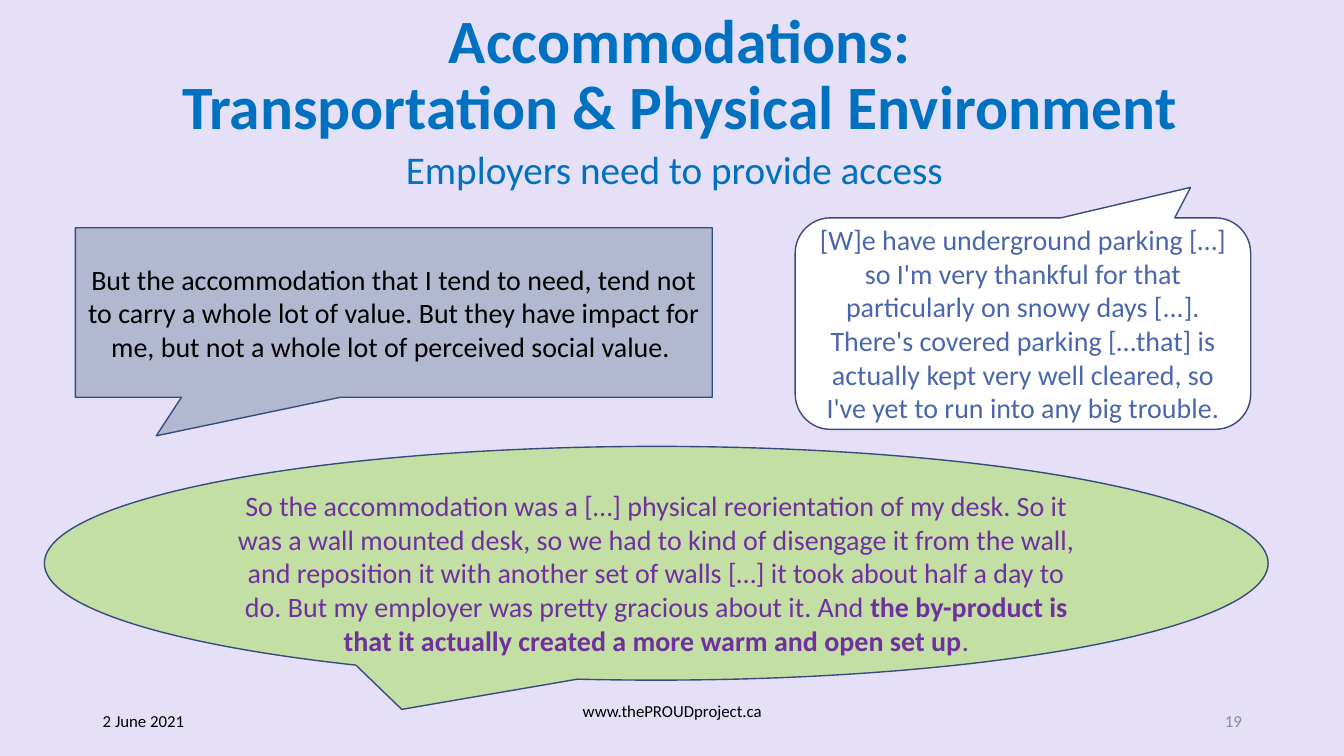
"""Build the slide on workplace accommodations with three quotation callouts."""
import pptx
import pptx.dml.color
import pptx.enum.shapes
import pptx.enum.text
import pptx.util
from lxml import etree

Cm = pptx.util.Cm
RGBColor = pptx.dml.color.RGBColor
MSO_SHAPE = pptx.enum.shapes.MSO_SHAPE
ANCHOR = pptx.enum.text.MSO_ANCHOR
ALIGN = pptx.enum.text.PP_ALIGN

LAVENDER = RGBColor(0xE5, 0xE0, 0xF8)
TITLE_BLUE = RGBColor(0x00, 0x70, 0xC0)
OUTLINE_BLUE = RGBColor(0x37, 0x4B, 0x7F)
QUOTE_BLUE = RGBColor(0x4A, 0x66, 0xAC)
SLATE = RGBColor(0x7F, 0x8F, 0xA9)
LIME = RGBColor(0x91, 0xDE, 0x26)
PURPLE = RGBColor(0x70, 0x30, 0xA0)
GREY = RGBColor(0x8C, 0x8C, 0x8C)
BLACK = RGBColor(0, 0, 0)
WHITE = RGBColor(0xFF, 0xFF, 0xFF)


def write(shape, text, size=20, color=BLACK, bold=False, align=ALIGN.CENTER,
          anchor=ANCHOR.MIDDLE, emphasis="", ending=""):
    """Fill the shape with one paragraph, optionally closing with bold words."""
    frame = shape.text_frame
    frame.word_wrap = True
    frame.auto_size = pptx.enum.text.MSO_AUTO_SIZE.NONE
    frame.vertical_anchor = anchor
    paragraph = frame.paragraphs[0]
    paragraph.text = text
    paragraph.alignment = align
    for part in filter(None, (emphasis, ending)):
        paragraph.add_run().text = part
    for run in paragraph.runs:
        run.font.name = "Calibri"
        run.font.size = pptx.util.Pt(size)
        run.font.color.rgb = color
        run.font.bold = bold or run.text == emphasis
    return paragraph


def add_callout(preset, left, top, width, height, fill, opacity, adjustments):
    """Draw an outlined speech callout with a partly transparent fill."""
    shape = slide.shapes.add_shape(preset, Cm(left), Cm(top), Cm(width), Cm(height))
    shape.shadow.inherit = False
    shape.fill.solid()
    shape.fill.fore_color.rgb = fill
    if opacity < 100:
        color = shape.fill._xPr.find(".//" + pptx.oxml.ns.qn("a:srgbClr"))
        etree.SubElement(color, pptx.oxml.ns.qn("a:alpha"), val=str(opacity * 1000))
    shape.line.color.rgb = OUTLINE_BLUE
    shape.line.width = pptx.util.Pt(1)
    for index, value in enumerate(adjustments):
        shape.adjustments[index] = value
    return shape


presentation = pptx.Presentation()
presentation.slide_width = Cm(33.87)
presentation.slide_height = Cm(19.05)
slide = presentation.slides.add_slide(presentation.slide_layouts[5])
slide.background.fill.solid()
slide.background.fill.fore_color.rgb = LAVENDER

title = slide.shapes.title
title.left, title.top, title.width, title.height = Cm(1.12), Cm(0.61), Cm(32.03), Cm(2.64)
heading = write(title, "Accommodations:\vTransportation & Physical Environment",
                size=44, color=TITLE_BLUE, bold=True)
heading.line_spacing = 0.9

subtitle = slide.shapes.add_textbox(Cm(8.61), Cm(3.53), Cm(16.99), Cm(1.45))
write(subtitle, "Employers need to provide access ", size=28, color=TITLE_BLUE,
      anchor=ANCHOR.TOP)

value_quote = add_callout(MSO_SHAPE.RECTANGULAR_CALLOUT, 1.9, 5.74, 16.05, 4.27,
                          SLATE, 49, (-0.373, 0.728))
write(value_quote,
      "But the accommodation that I tend to need, tend not to carry a whole lot of value. "
      "But they have impact for me, but not a whole lot of perceived social value. ")

parking_quote = add_callout(MSO_SHAPE.ROUNDED_RECTANGULAR_CALLOUT, 20.04, 5.49, 11.48, 5.33,
                            WHITE, 100, (0.368, -0.644, 0.167))
write(parking_quote,
      "[W]e have underground parking […] so I'm very thankful for that particularly on "
      "snowy days [...]. There's covered parking […that] is actually kept very well "
      "cleared, so I've yet to run into any big trouble.", color=QUOTE_BLUE)

desk_quote = add_callout(MSO_SHAPE.OVAL_CALLOUT, 1.12, 11.25, 30.84, 5.89,
                         LIME, 40, (-0.208, 0.625))
write(desk_quote,
      "So the accommodation was a […] physical reorientation of my desk. So it was a wall "
      "mounted desk, so we had to kind of disengage it from the wall, and reposition it "
      "with another set of walls […] it took about half a day to do. But my employer was "
      "pretty gracious about it. And ", color=PURPLE, anchor=ANCHOR.TOP,
      emphasis="the by-product is that it actually created a more warm and open set up",
      ending=".")
desk_quote.text_frame.margin_top = Cm(0.2)
desk_quote.text_frame.margin_bottom = 0

for text, left, width, color, align, anchor in (
    ("2 June 2021", 2.34, 7.62, BLACK, ALIGN.LEFT, ANCHOR.MIDDLE),
    ("www.thePROUDproject.ca", 11.23, 11.43, BLACK, ALIGN.CENTER, ANCHOR.TOP),
    ("19", 23.93, 7.62, GREY, ALIGN.RIGHT, ANCHOR.MIDDLE),
):
    footer = slide.shapes.add_textbox(Cm(left), Cm(17.65), Cm(width), Cm(1.02))
    write(footer, text, size=12, color=color, align=align, anchor=anchor)
    if anchor == ANCHOR.TOP:
        footer.text_frame.margin_top = 0

presentation.save("out.pptx")
